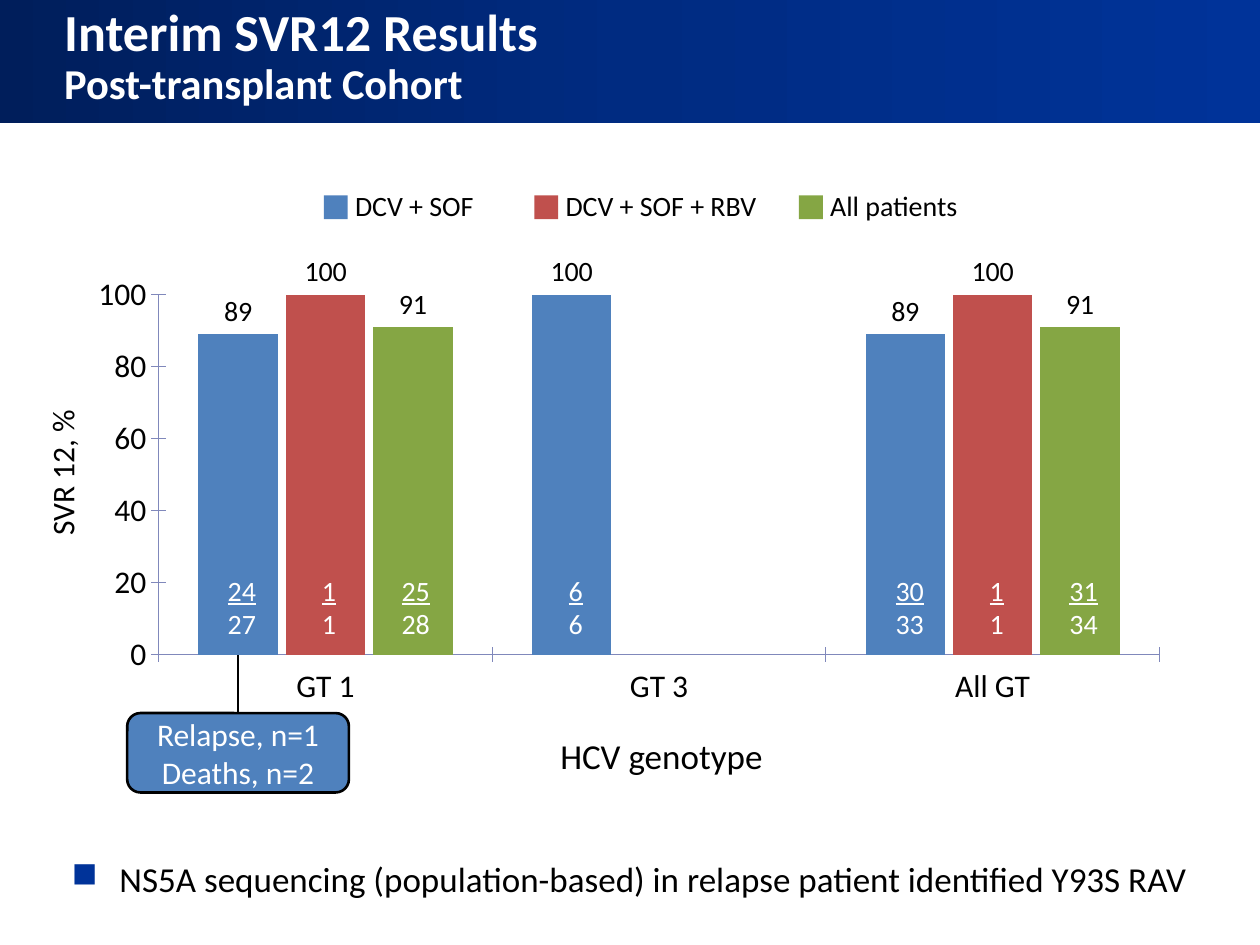
import copy

import pptx
import pptx.chart.data
import pptx.dml.color
import pptx.enum.chart
import pptx.enum.shapes
import pptx.enum.text
import pptx.oxml
import pptx.oxml.ns
import pptx.util

Inches = pptx.util.Inches
Pt = pptx.util.Pt
qn = pptx.oxml.ns.qn
ALIGN = pptx.enum.text.PP_ALIGN
ANCHOR = pptx.enum.text.MSO_ANCHOR
SHAPE = pptx.enum.shapes.MSO_SHAPE
BLUE, RED, GREEN = "4F81BD", "C0504D", "85A644"


def color(value):
    return pptx.dml.color.RGBColor.from_string(value)


def write(shape, runs, ink="000000", align=ALIGN.LEFT, **frame_format):
    frame = shape.text_frame
    for name, value in {"word_wrap": True, **frame_format}.items():
        setattr(frame, name, value)
    paragraph = frame.paragraphs[0]
    paragraph.alignment = align
    for index, (text, font_format) in enumerate(runs):
        if index:
            paragraph.add_line_break()
        run = paragraph.add_run()
        run.text = text
        for name, value in {"name": "Calibri", **font_format}.items():
            setattr(run.font, name, value)
        run.font.color.rgb = color(ink)
    return paragraph


presentation = pptx.Presentation()
presentation.slide_width = Inches(10)
presentation.slide_height = Inches(7.5)
slide = presentation.slides.add_slide(presentation.slide_layouts[6])
shapes = slide.shapes

banner = shapes.add_shape(SHAPE.RECTANGLE, 0, 0, Inches(10), Inches(0.98))
banner.shadow.inherit = False
banner.line.fill.background()
banner.fill.gradient()
banner.fill.gradient_angle = 0
stop_list = banner._element.spPr.find(qn("a:gradFill")).find(qn("a:gsLst"))
stop_list.insert(1, copy.deepcopy(stop_list[0]))
stops = [(0, "001E5B"), (0.5, "002B81"), (1, "003399")]
for stop, (position, value) in zip(banner.fill.gradient_stops, stops):
    stop.position = position
    stop.color.rgb = color(value)
title = write(
    banner,
    [("Interim SVR12 Results", {"size": Pt(29.7), "bold": True}),
     ("Post-transplant Cohort", {"size": Pt(24.3), "bold": True})],
    ink="FFFFFF", vertical_anchor=ANCHOR.TOP,
    margin_left=Inches(0.51), margin_right=Inches(0.43),
)
title.line_spacing = 0.9

legend = [
    ("DCV + SOF", BLUE, 2.57, 1.16),
    ("DCV + SOF + RBV", RED, 4.24, 1.74),
    ("All patients", GREEN, 6.34, 1.22),
]
for text, value, left, width in legend:
    key = shapes.add_shape(SHAPE.RECTANGLE, Inches(left), Inches(1.55), Inches(0.19), Inches(0.19))
    key.shadow.inherit = False
    key.fill.solid()
    key.fill.fore_color.rgb = color(value)
    key.line.fill.background()
    label = shapes.add_textbox(Inches(left + 0.15), Inches(1.45), Inches(width), Inches(0.37))
    write(label, [(text, {"size": Pt(16)})], word_wrap=False)

chart_data = pptx.chart.data.CategoryChartData()
chart_data.categories = ["GT 1", "GT 3", "All GT"]
chart_data.add_series("DCV + SOF", [89, 100, 89])
chart_data.add_series("DCV + SOF + RBV", [100, None, 100])
chart_data.add_series("All patients", [91, None, 91])
chart = shapes.add_chart(
    pptx.enum.chart.XL_CHART_TYPE.COLUMN_CLUSTERED,
    Inches(0.67), Inches(1.94), Inches(8.68), Inches(3.76), chart_data,
).chart
chart.has_legend = False
chart.has_title = False
chart.font.name = "Calibri"
chart.font.size = Pt(18)
value_format = {"minimum_scale": 0, "maximum_scale": 100, "major_unit": 20}
for name, value in value_format.items():
    setattr(chart.value_axis, name, value)
for axis in (chart.category_axis, chart.value_axis):
    axis.has_major_gridlines = False
    axis.major_tick_mark = pptx.enum.chart.XL_TICK_MARK.CROSS
    axis.format.line.color.rgb = color("8088BB")
    axis.format.line.width = Pt(0.75)
    axis.tick_labels.font.size = Pt(18)
    axis.tick_labels.font.color.rgb = color("000000")
plot = chart.plots[0]
for name, value in {"gap_width": 100, "overlap": -10, "vary_by_categories": False}.items():
    setattr(plot, name, value)
for series, value in zip(plot.series, (BLUE, RED, GREEN)):
    series.format.fill.solid()
    series.format.fill.fore_color.rgb = color(value)
    labels = series.data_labels
    labels.show_value = True
    labels.position = pptx.enum.chart.XL_LABEL_POSITION.OUTSIDE_END
    labels.font.size = Pt(16)
    labels.font.color.rgb = color("000000")

plot_area = chart._chartSpace.chart.plotArea
for layout in plot_area.findall(qn("c:layout")):
    plot_area.remove(layout)
settings = {"layoutTarget": "inner", "xMode": "edge", "yMode": "edge",
            "x": 0.068, "y": 0.106, "w": 0.915, "h": 0.76}
items = "".join(f'<c:{name} val="{value}"/>' for name, value in settings.items())
plot_area.insert(0, pptx.oxml.parse_xml(
    f'<c:layout {pptx.oxml.ns.nsdecls("c")}><c:manualLayout>{items}</c:manualLayout></c:layout>'))

axis_titles = [("SVR 12, %", 18, -0.85, 3.55, 0.4, 270), ("HCV genotype", 20, 3.91, 5.78, 0.44, 0)]
for text, size, left, top, height, rotation in axis_titles:
    box = shapes.add_textbox(Inches(left), Inches(top), Inches(2.68), Inches(height))
    box.rotation = rotation
    write(box, [(text, {"size": Pt(size)})], align=ALIGN.CENTER)

fractions = [
    [("24", "27"), ("1", "1"), ("25", "28")],
    [("6", "6")],
    [("30", "33"), ("1", "1"), ("31", "34")],
]
for group, bars in enumerate(fractions):
    for bar, (responders, patients) in enumerate(bars):
        center = 1.92 + 2.65 * group + 0.69 * bar
        box = shapes.add_textbox(Inches(center - 0.22), Inches(4.5), Inches(0.44), Inches(0.64))
        write(
            box,
            [(responders, {"size": Pt(16), "underline": True}), (patients, {"size": Pt(16)})],
            ink="FFFFFF", align=ALIGN.CENTER, word_wrap=False,
        )

connector = shapes.add_connector(
    pptx.enum.shapes.MSO_CONNECTOR.STRAIGHT, Inches(1.89), Inches(5.85), Inches(1.89), Inches(5.2))
connector._element.spPr.append(pptx.oxml.parse_xml(f'<a:effectLst {pptx.oxml.ns.nsdecls("a")}/>'))
callout = shapes.add_shape(
    SHAPE.ROUNDED_RECTANGLE, Inches(1.01), Inches(5.66), Inches(1.76), Inches(0.63))
callout.shadow.inherit = False
callout.fill.solid()
callout.fill.fore_color.rgb = color(BLUE)
for shape in (connector, callout):
    shape.line.color.rgb = color("000000")
    shape.line.width = Pt(1.5)
write(
    callout,
    [("Relapse, n=1", {"size": Pt(18)}), ("Deaths, n=2", {"size": Pt(18)})],
    ink="FFFFFF", align=ALIGN.CENTER, vertical_anchor=ANCHOR.MIDDLE,
)

note = shapes.add_textbox(Inches(0.47), Inches(6.76), Inches(9.2), Inches(0.66))
paragraph = write(note, [(
    "NS5A sequencing (population-based) in relapse patient identified Y93S RAV", {"size": Pt(20)})])
paragraph.space_after = Pt(6)
properties = paragraph._p.get_or_add_pPr()
properties.set("marL", str(Inches(0.38)))
properties.set("indent", str(Inches(-0.38)))
for bullet in ('<a:buClr {}><a:srgbClr val="003399"/></a:buClr>', '<a:buChar {} char="■"/>'):
    properties.append(pptx.oxml.parse_xml(bullet.format(pptx.oxml.ns.nsdecls("a"))))

presentation.save("out.pptx")
